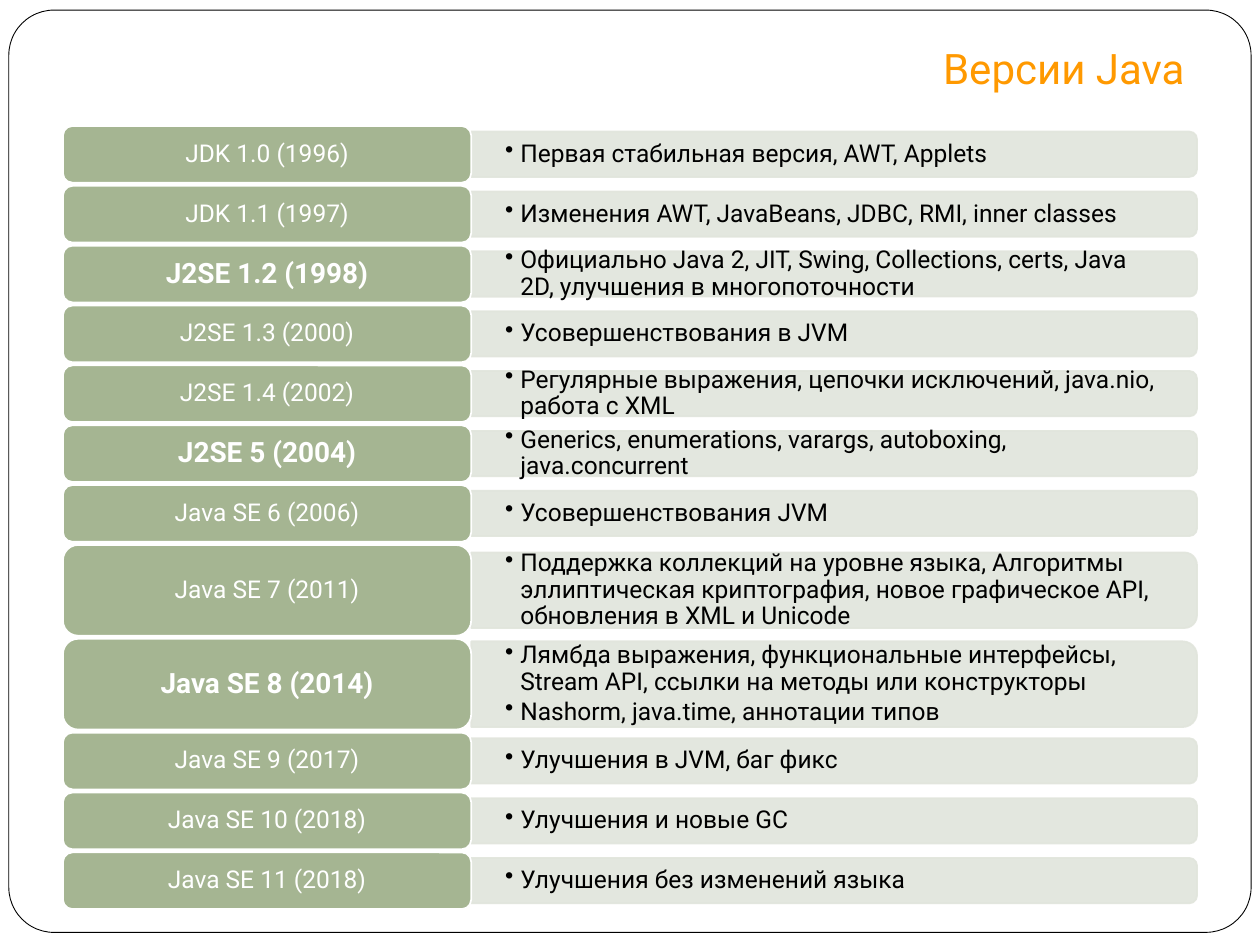
from pptx import Presentation
from pptx import util as u
from pptx.dml.color import RGBColor
from pptx.enum import shapes, text
from pptx.oxml import ns
from lxml import etree

BLACK = RGBColor(0x00, 0x00, 0x00)
WHITE = RGBColor(0xFF, 0xFF, 0xFF)
ORANGE = RGBColor(0xFF, 0x99, 0x00)
SAGE = RGBColor(0xA5, 0xB5, 0x92)
PALE_SAGE = RGBColor(0xE1, 0xE5, 0xDC)

# Version, whether it is a milestone, and its changes
VERSIONS = [
    ("JDK 1.0 (1996)", False, ["Первая стабильная версия, AWT, Applets"]),
    ("JDK 1.1 (1997)", False, ["Изменения AWT, JavaBeans, JDBC, RMI, inner classes"]),
    ("J2SE 1.2 (1998)", True, ["Официально Java 2, JIT, Swing, Collections, certs, "
                               "Java 2D, улучшения в многопоточности"]),
    ("J2SE 1.3 (2000)", False, ["Усовершенствования в JVM"]),
    ("J2SE 1.4 (2002)", False, ["Регулярные выражения, цепочки исключений, java.nio, "
                                "работа с XML"]),
    ("J2SE 5 (2004)", True, ["Generics, enumerations, varargs, autoboxing, "
                             "java.concurrent"]),
    ("Java SE 6 (2006)", False, ["Усовершенствования JVM"]),
    ("Java SE 7 (2011)", False, ["Поддержка коллекций на уровне языка, Алгоритмы "
                                 "эллиптическая криптография, новое графическое API, "
                                 "обновления в XML и Unicode"]),
    ("Java SE 8 (2014)", True, ["Лямбда выражения, функциональные интерфейсы, "
                                "Stream API, ссылки на методы или конструкторы",
                                "Nashorm, java.time, аннотации типов"]),
    ("Java SE 9 (2017)", False, ["Улучшения в JVM, баг фикс"]),
    ("Java SE 10 (2018)", False, ["Улучшения и новые GC"]),
    ("Java SE 11 (2018)", False, ["Улучшения без изменений языка"]),
]

# Row, bar and text heights in inches
NORMAL_ROW = (0.45, 0.36, 0.33)
TALL_ROWS = {"Java SE 7 (2011)": (0.72, 0.6, 0.54),
             "Java SE 8 (2014)": (0.72, 0.68, 0.61)}
ROW_GAP = 0.025
FIRST_TOP = 1
LABEL_LEFT, LABEL_WIDTH = 0.5, 3.24
BAR_LEFT = LABEL_LEFT + LABEL_WIDTH
BAR_WIDTH = 5.76


class VersionSlide:
    font = "Roboto"

    def __init__(self, slide):
        self.slide = slide

    def shape(self, kind, left, top, width, height, fill, line, line_width):
        box = self.slide.shapes.add_shape(
            kind, *(u.Inches(n) for n in (left, top, width, height)))
        box.shadow.inherit = False
        box.fill.solid()
        box.fill.fore_color.rgb = fill
        box.line.color.rgb = line
        box.line.width = u.Pt(line_width)
        return box

    def frame(self, box, insets):
        """Prepare wrapped, vertically centred text with left, top, right, bottom insets."""
        frame = box.text_frame
        frame.word_wrap = True
        frame.vertical_anchor = text.MSO_ANCHOR.MIDDLE
        (frame.margin_left, frame.margin_top,
         frame.margin_right, frame.margin_bottom) = (u.Inches(n) for n in insets)
        return frame

    def text_box(self, left, top, width, height, insets):
        box = self.slide.shapes.add_textbox(
            *(u.Inches(n) for n in (left, top, width, height)))
        return self.frame(box, insets)

    def run(self, paragraph, words, size, color, bold=False):
        run = paragraph.add_run()
        run.text = words
        run.font.name = self.font
        run.font.size = u.Pt(size)
        run.font.color.rgb = color
        run.font.bold = bold

    def border(self):
        border = self.shape(shapes.MSO_SHAPE.ROUNDED_RECTANGLE,
                            0.07, 0.08, 9.86, 7.32, WHITE, BLACK, 0.5)
        border.adjustments[0] = 0.049

    def title(self, words):
        frame = self.text_box(1, 0.3, 8.5, 0.52, (0.1, 0.05, 0.1, 0.1))
        heading = frame.paragraphs[0]
        heading.alignment = text.PP_ALIGN.RIGHT
        self.run(heading, words, 24, ORANGE)

    def bar(self, middle, height):
        """Draw a bar rounded on the right: a top-rounded shape turned by 90 degrees."""
        bar = self.shape(shapes.MSO_SHAPE.ROUND_2_SAME_RECTANGLE,
                         BAR_LEFT + (BAR_WIDTH - height) / 2, middle - BAR_WIDTH / 2,
                         height, BAR_WIDTH, PALE_SAGE, PALE_SAGE, 1)
        bar.rotation = 90
        for color in bar._element.spPr.iter(ns.qn("a:srgbClr")):
            etree.SubElement(color, ns.qn("a:alpha"), val="90000")

    def changes(self, middle, height, items):
        frame = self.text_box(BAR_LEFT, middle - height / 2, 5.74, height,
                              (0.27, 0.14, 0.27, 0.14))
        for index, item in enumerate(items):
            change = frame.add_paragraph() if index else frame.paragraphs[0]
            change.level = 1
            change.line_spacing = 0.9
            change.space_after = u.Pt(2)
            properties = change._p.get_or_add_pPr()
            properties.set("marL", str(u.Inches(0.12)))
            properties.set("indent", str(u.Inches(-0.12)))
            etree.SubElement(properties, ns.qn("a:buChar"), char="•")
            self.run(change, item, 14, BLACK)

    def label(self, top, height, words, milestone):
        label = self.shape(shapes.MSO_SHAPE.ROUNDED_RECTANGLE,
                           LABEL_LEFT, top, LABEL_WIDTH, height, SAGE, WHITE, 1)
        version = self.frame(label, (0.08, 0.05, 0.08, 0.05)).paragraphs[0]
        version.alignment = text.PP_ALIGN.CENTER
        version.line_spacing = 0.9
        self.run(version, words, 16 if milestone else 14, WHITE, milestone)


def main():
    deck = Presentation()
    deck.slide_width, deck.slide_height = u.Inches(10), u.Inches(7.5)
    page = VersionSlide(deck.slides.add_slide(deck.slide_layouts[6]))
    page.border()
    page.title("Версии Java")

    top = FIRST_TOP
    for version, milestone, items in VERSIONS:
        row_height, bar_height, text_height = TALL_ROWS.get(version, NORMAL_ROW)
        middle = top + row_height / 2
        page.bar(middle, bar_height)
        page.changes(middle, text_height, items)
        page.label(top, row_height, version, milestone)
        top += row_height + ROW_GAP

    deck.save("out.pptx")


if __name__ == "__main__":
    main()
